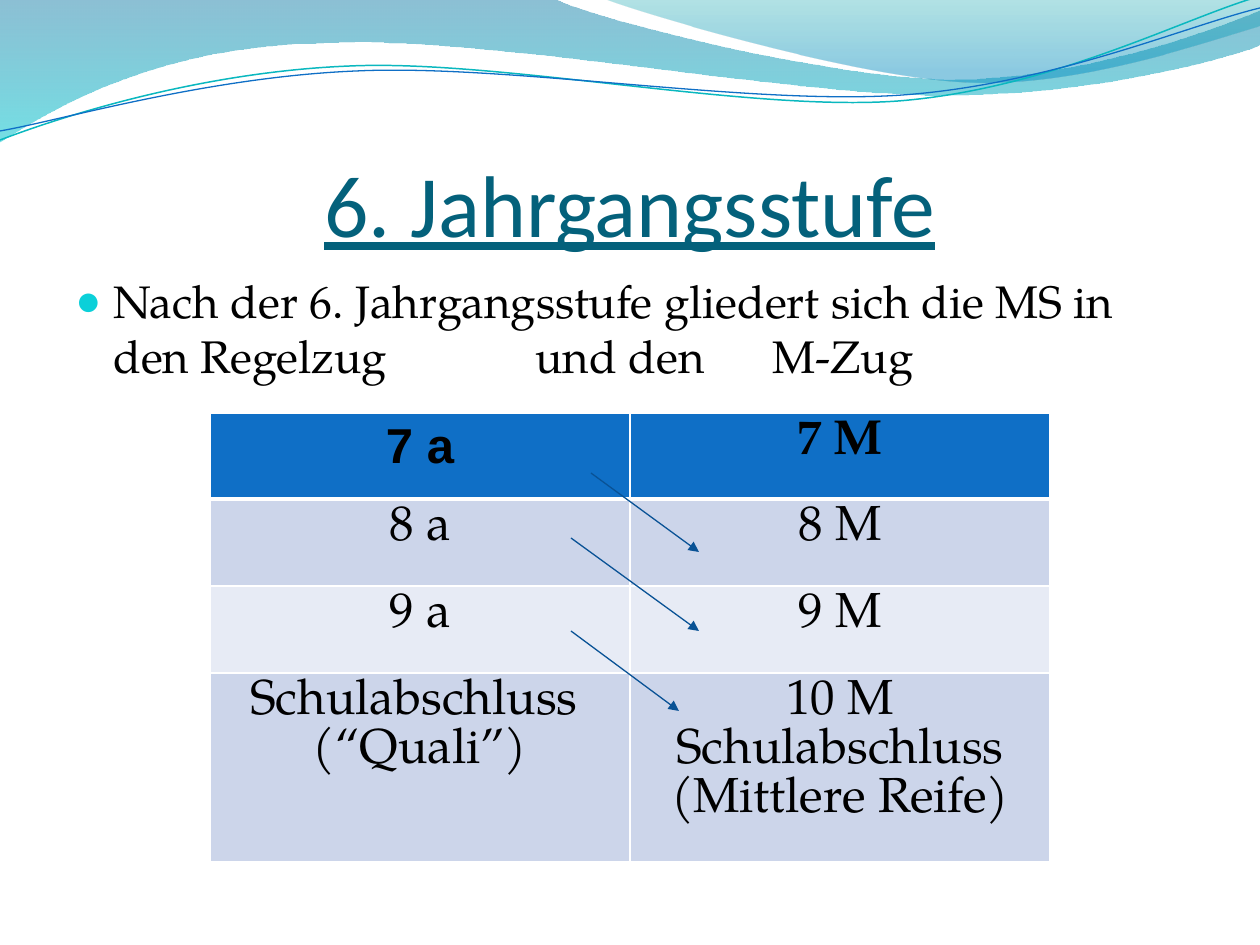
from lxml.etree import SubElement
from pptx import Presentation
from pptx.dml.color import RGBColor
from pptx.enum.shapes import MSO_CONNECTOR
from pptx.enum.text import MSO_ANCHOR, PP_ALIGN
from pptx.oxml.ns import qn
from pptx.util import Pt

PX = 914400 / 126
BLUE = RGBColor(0x0F, 0x6F, 0xC6)
TEAL = RGBColor(0x0A, 0xB8, 0xBF)
TITLE = RGBColor(0x04, 0x61, 0x7B)
ARROW = RGBColor(0x09, 0x52, 0x95)
BULLET = RGBColor(0x0B, 0xD0, 0xD9)
BAND = RGBColor(0xCC, 0xD5, 0xEA)
PALE = RGBColor(0xE7, 0xEB, 0xF5)
WHITE = RGBColor(0xFF, 0xFF, 0xFF)
BLACK = RGBColor(0, 0, 0)
SERIF = "TeX Gyre Pagella"

HEADING = "6. Jahrgangsstufe"
INTRO = "Nach der 6. Jahrgangsstufe gliedert sich die MS in den Regelzug\tund den\tM-Zug"
INTRO_TABS = (460, 697)
TRACKS = [
    (["7 a"], ["7 M"]),
    (["8 a"], ["8 M"]),
    (["9 a"], ["9 M"]),
    (["Schulabschluss ", "(“Quali”)"], ["10 M", "Schulabschluss", "(Mittlere Reife)"]),
]
ROW_FILLS = [BLUE, BAND, PALE, BAND]
ROW_HEIGHTS = [86, 87, 87, 159]
TRANSFERS = [((591, 473), (699, 552)), ((571, 538), (699, 631)), ((571, 631), (679, 711))]

BANDS = [
    ([[(0, 0)], [(554, -1)],
      [(600, 21), (837, 79), (955, 79)], [(1074, 79), (1207, 33), (1260, 11)],
      [(1261, 45)], [(1239, 55), (1096, 96), (940, 95)],
      [(784, 95), (481, 35), (324, 43)], [(163, 45), (58, 105), (-1, 142)]],
     [("0074A1", 0, 45), ("00C6CF", 100, 55)]),
    ([[(604, -1)], [(641, 14), (859, 78), (969, 82)],
      [(1079, 87), (1211, 40), (1260, 26)], [(1260, 0)]],
     [("00A1A9", 0, 30), ("008BBF", 80, 45)]),
]
WAVES = [
    ([[(0, 140)], [(60, 117), (199, 72), (349, 66)],
      [(498, 59), (747, 112), (898, 101)], [(1050, 89), (1182, 19), (1257, -3)]], TEAL, 0.85),
    ([[(0, 131)], [(59, 121), (207, 77), (357, 71)],
      [(508, 64), (752, 106), (903, 95)], [(1053, 84), (1186, 26), (1260, 8)]], BLUE, 0.75),
]


def px(value):
    return round(value * PX)


def add_curve(slide, steps, close):
    points = [(px(x), px(y)) for step in steps for x, y in step]
    builder = slide.shapes.build_freeform(*points[0], scale=1.0)
    builder.add_line_segments(points[1:], close=close)
    curve = builder.convert_to_shape()
    curve.shadow.inherit = False
    segments = iter(list(curve._element.iter(qn("a:lnTo"))))
    for step in steps[1:]:
        segment = next(segments)
        if len(step) == 3:
            bezier = segment.makeelement(qn("a:cubicBezTo"), {})
            segment.addprevious(bezier)
            for line in (segment, next(segments), next(segments)):
                bezier.append(line[0])
                line.getparent().remove(line)
    return curve


def add_band(slide, steps, stops):
    band = add_curve(slide, steps, True)
    band.line.fill.background()
    band.fill.gradient()
    band.fill.gradient_angle = 270
    gradient = band.fill._fill._gradFill.find(qn("a:gsLst"))
    for stop in list(gradient):
        gradient.remove(stop)
    for color, position, alpha in stops:
        stop = SubElement(gradient, qn("a:gs"), pos=str(position * 1000))
        tint = SubElement(stop, qn("a:srgbClr"), val=color)
        SubElement(tint, qn("a:alpha"), val=str(alpha * 1000))


def add_wave(slide, steps, color, width):
    wave = add_curve(slide, steps, False)
    wave.fill.background()
    wave.line.color.rgb = color
    wave.line.width = Pt(width)


def add_run(paragraph, text, size, font=SERIF, color=BLACK, bold=False):
    run = paragraph.add_run()
    run.text = text
    run.font.size, run.font.name, run.font.bold = Pt(size), font, bold
    run.font.color.rgb = color
    return run


def add_frame(slide, left, top, width, height):
    frame = slide.shapes.add_textbox(px(left), px(top), px(width), px(height)).text_frame
    frame.word_wrap = True
    return frame


def add_heading(slide):
    frame = add_frame(slide, 63, 97, 1134, 158)
    frame.vertical_anchor = MSO_ANCHOR.BOTTOM
    frame.margin_left = frame.margin_right = frame.margin_bottom = 0
    paragraph = frame.paragraphs[0]
    paragraph.alignment = PP_ALIGN.CENTER
    add_run(paragraph, HEADING, 50, "Calibri", TITLE).font.underline = True


def add_intro(slide):
    paragraph = add_frame(slide, 63, 267, 1134, 605).paragraphs[0]
    add_run(paragraph, INTRO, 26)
    layout = paragraph._p.get_or_add_pPr()
    layout.set("marL", str(px(38)))
    layout.set("indent", str(px(-38)))
    before = SubElement(layout, qn("a:spcBef"))
    SubElement(before, qn("a:spcPct"), val="20000")
    SubElement(SubElement(layout, qn("a:buClr")), qn("a:srgbClr"), val=str(BULLET))
    SubElement(layout, qn("a:buSzPct"), val="95000")
    SubElement(layout, qn("a:buFont"), typeface="Arial")
    SubElement(layout, qn("a:buChar"), char="●")
    tabs = SubElement(layout, qn("a:tabLst"))
    for position in INTRO_TABS:
        SubElement(tabs, qn("a:tab"), pos=str(px(position)), algn="l")


def set_borders(cell, header):
    properties = cell._tc.get_or_add_tcPr()
    for index, side in enumerate(("lnL", "lnR", "lnT", "lnB")):
        width = Pt(3 if header and side == "lnB" else 1)
        border = properties.makeelement(qn(f"a:{side}"), {"w": str(width)})
        SubElement(SubElement(border, qn("a:solidFill")), qn("a:srgbClr"), val=str(WHITE))
        properties.insert(index, border)


def add_tracks(slide):
    table = slide.shapes.add_table(len(TRACKS), 2, px(210), px(413), px(840),
                                   px(sum(ROW_HEIGHTS))).table
    for r, (track, fill, height) in enumerate(zip(TRACKS, ROW_FILLS, ROW_HEIGHTS)):
        table.rows[r].height = px(height)
        for c, lines in enumerate(track):
            cell = table.cell(r, c)
            cell.fill.solid()
            cell.fill.fore_color.rgb = fill
            set_borders(cell, r == 0)
            font = "Arial" if r == c == 0 else SERIF
            frame = cell.text_frame
            for i, line in enumerate(lines):
                paragraph = frame.add_paragraph() if i else frame.paragraphs[0]
                paragraph.alignment = PP_ALIGN.CENTER
                add_run(paragraph, line, 28, font, bold=r == 0)


def add_transfer(slide, start, end):
    arrow = slide.shapes.add_connector(MSO_CONNECTOR.STRAIGHT, *map(px, start + end))
    arrow.line.color.rgb = ARROW
    arrow.line.width = Pt(0.75)
    SubElement(arrow.line._get_or_add_ln(), qn("a:tailEnd"), type="triangle")
    SubElement(arrow._element.spPr, qn("a:effectLst"))


def main():
    deck = Presentation()
    deck.slide_width, deck.slide_height = px(1260), px(945)
    slide = deck.slides.add_slide(deck.slide_layouts[6])
    for steps, stops in BANDS:
        add_band(slide, steps, stops)
    for steps, color, width in WAVES:
        add_wave(slide, steps, color, width)
    add_heading(slide)
    add_intro(slide)
    add_tracks(slide)
    for start, end in TRANSFERS:
        add_transfer(slide, start, end)
    deck.save("out.pptx")


if __name__ == "__main__":
    main()
